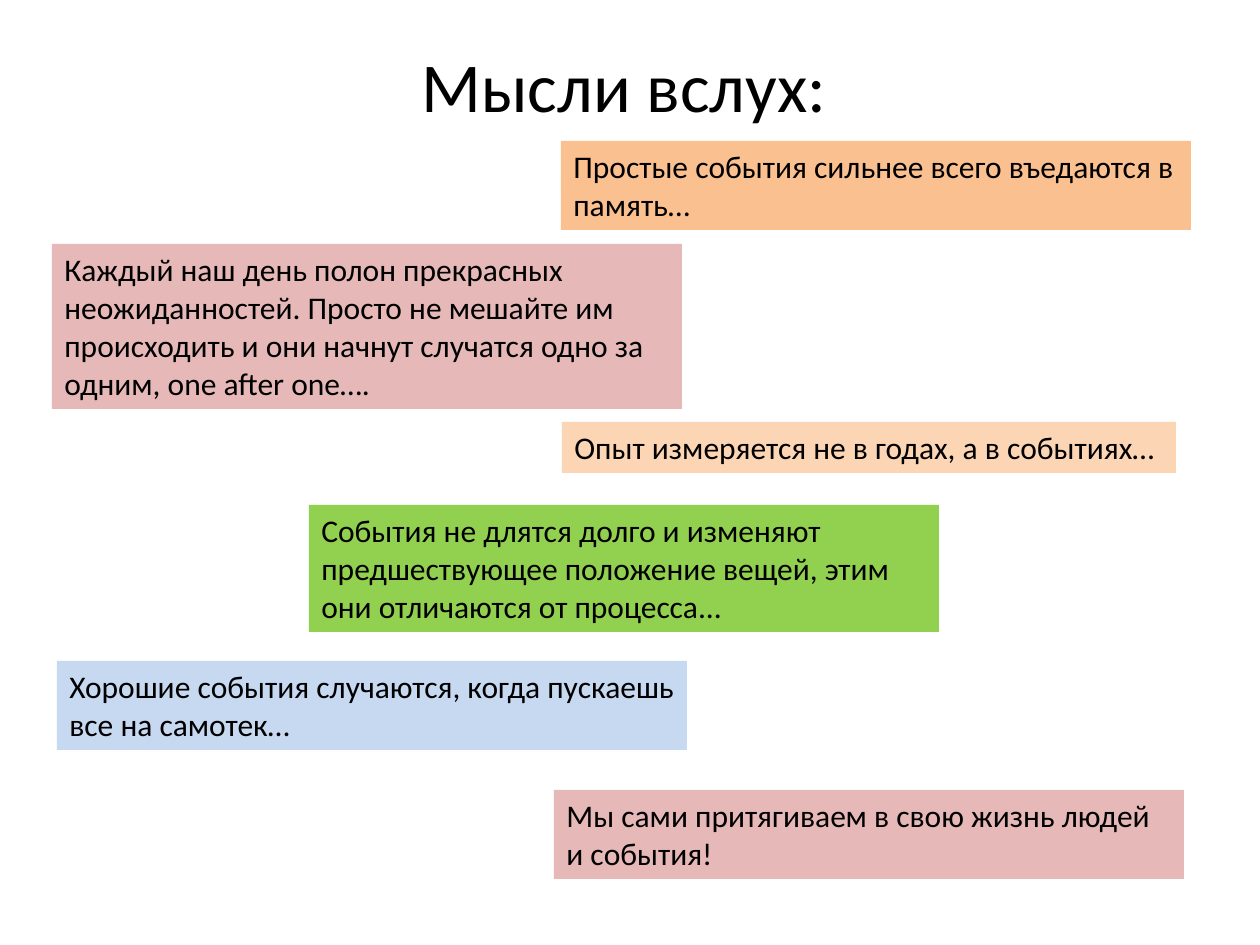
from pptx import Presentation
from pptx.dml.color import RGBColor
from pptx.enum.text import MSO_ANCHOR, MSO_AUTO_SIZE, PP_ALIGN
from pptx.util import Emu, Pt

EMU_PER_PX = 914400 // 126
SLIDE_SIZE = (1260, 945)
FONT = "Calibri"
BLACK = "000000"
CENTER, LEFT = PP_ALIGN.CENTER, PP_ALIGN.LEFT
MIDDLE, TOP = MSO_ANCHOR.MIDDLE, MSO_ANCHOR.TOP
GROW, FIXED = MSO_AUTO_SIZE.SHAPE_TO_FIT_TEXT, MSO_AUTO_SIZE.NONE

TITLE = "Мысли вслух:"
TITLE_BOX = (57, 28, 1134, 113)

THOUGHT_WIDTH = 630
LINE_HEIGHT = 38
VERTICAL_PADDING = 13

# left, top, lines, fill, text
THOUGHTS = [
    (561, 141, 2, "FAC090", "Простые события сильнее всего въедаются в память…"),
    (52, 244, 4, "E6B9B8",
     "Каждый наш день полон прекрасных неожиданностей. Просто не мешайте им "
     "происходить и они начнут случатся одно за одним, one after one…."),
    (562, 422, 1, "FCD5B5", "Опыт измеряется не в годах, а в событиях…"),
    (309, 505, 3, "92D050",
     "События не длятся долго и изменяют предшествующее положение вещей, "
     "этим они отличаются от процесса..."),
    (57, 661, 2, "C6D9F1", "Хорошие события случаются, когда пускаешь все на самотек…"),
    (554, 790, 2, "E6B9B8", "Мы сами притягиваем в свою жизнь людей и события!"),
]
ONE_LINE_WIDTH = 614


def px(length):
    return Emu(length * EMU_PER_PX)


def color(hex_code):
    return RGBColor.from_string(hex_code)


def add_text(slide, box, text, size, align=LEFT, anchor=TOP, auto_size=GROW, wrap=True):
    text_box = slide.shapes.add_textbox(*map(px, box))
    frame = text_box.text_frame
    frame_format = {"word_wrap": wrap, "auto_size": auto_size, "vertical_anchor": anchor}
    for name, value in frame_format.items():
        setattr(frame, name, value)
    paragraph = frame.paragraphs[0]
    paragraph.alignment = align
    run = paragraph.add_run()
    run.text = text
    for name, value in {"name": FONT, "size": Pt(size)}.items():
        setattr(run.font, name, value)
    run.font.color.rgb = color(BLACK)
    return text_box


def add_thought(slide, left, top, lines, fill, text):
    wrap = lines > 1
    width = THOUGHT_WIDTH if wrap else ONE_LINE_WIDTH
    height = lines * LINE_HEIGHT + VERTICAL_PADDING
    thought = add_text(slide, (left, top, width, height), text, 18, wrap=wrap)
    thought.fill.solid()
    thought.fill.fore_color.rgb = color(fill)


def main():
    deck = Presentation()
    deck.slide_width, deck.slide_height = map(px, SLIDE_SIZE)
    slide = deck.slides.add_slide(deck.slide_layouts[6])
    add_text(slide, TITLE_BOX, TITLE, 40, CENTER, MIDDLE, FIXED)
    for thought in THOUGHTS:
        add_thought(slide, *thought)
    deck.save("out.pptx")


if __name__ == "__main__":
    main()
